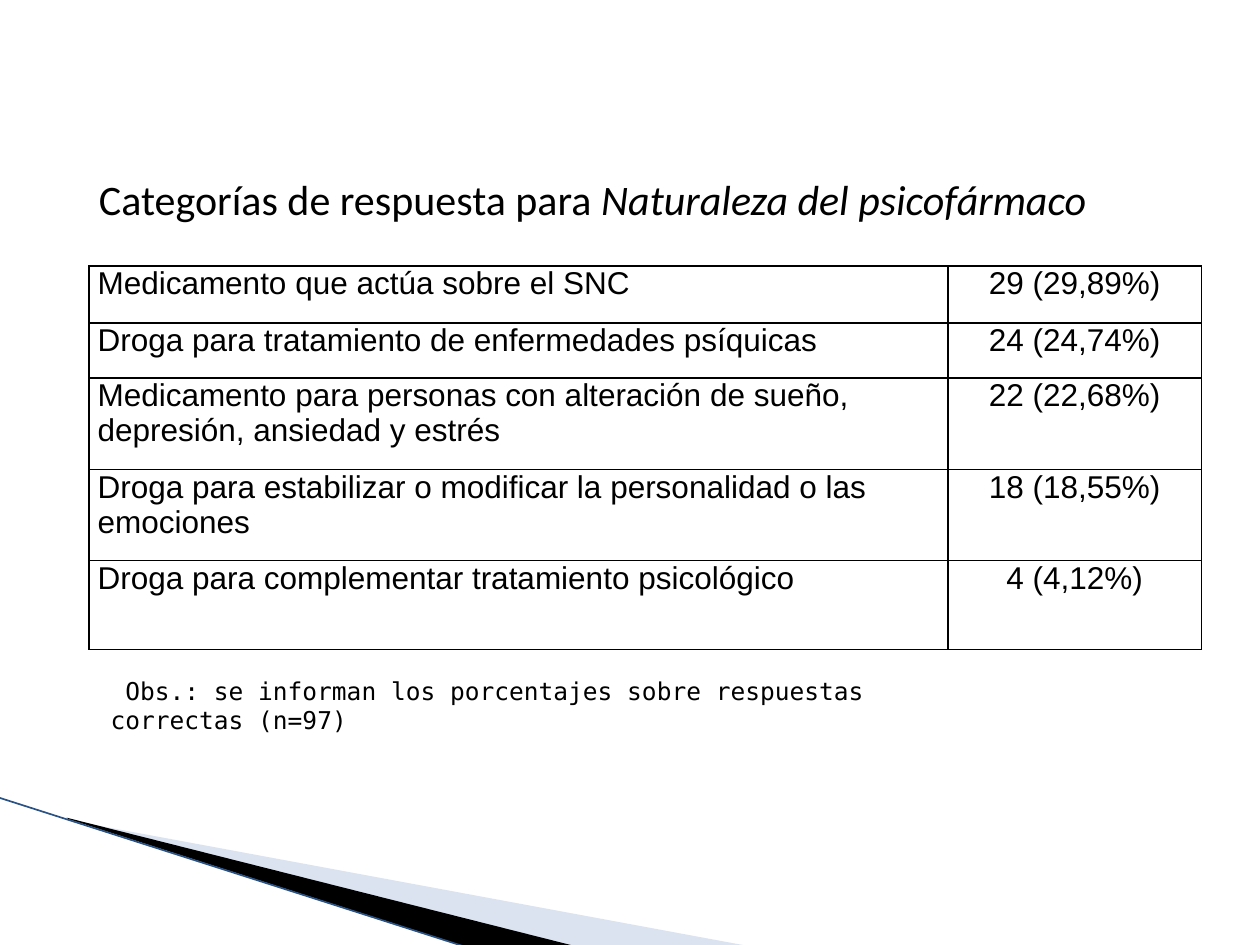
import pptx
import pptx.dml.color
import pptx.enum.shapes
import pptx.enum.text
import pptx.oxml
import pptx.oxml.ns
import pptx.util

THEME = {
    "ink": "000000", "pale": "A7B9DB", "edge": "2A5284",
    "title_font": "Calibri", "table_font": "Arial", "note_font": "DejaVu Sans Mono",
    "title_size": 24, "table_size": 18, "note_size": 14,
}
ALIGN = pptx.enum.text.PP_ALIGN
TOP = pptx.enum.text.MSO_ANCHOR.TOP
NS = pptx.oxml.ns.nsdecls("a")
qn = pptx.oxml.ns.qn

deck = pptx.Presentation()
deck.slide_width = pptx.util.Inches(10)
deck.slide_height = pptx.util.Inches(7.5)
col = deck.slide_width / 100
row = deck.slide_height / 75
slide = deck.slides.add_slide(deck.slide_layouts[5])


def rgb(name):
    return pptx.dml.color.RGBColor.from_string(THEME[name])


def write(frame, text, role, align=ALIGN.LEFT, italic=False):
    """Append a run to the frame's first paragraph, styled for its role."""
    frame.word_wrap = True
    frame.vertical_anchor = TOP
    paragraph = frame.paragraphs[0]
    paragraph.alignment = align
    run = paragraph.add_run()
    run.text = text
    run.font.name = THEME[role + "_font"]
    run.font.size = pptx.util.Pt(THEME[role + "_size"])
    run.font.italic = italic
    run.font.color.rgb = rgb("ink")


# Corner wedges: colour, opacity in percent, frame and corners in columns and rows.
# The corners reach beyond the frame, so the outline is measured from the frame.
wedges = [
    ("pale", 40, (7.8, 54.7, 41.6, 15.8),
     [(5.5, 65.1), (59.5, 75.1), (45.6, 75.1), (5.5, 65)]),
    ("ink", 100, (-0.6, 63.3, 41.6, 9.2),
     [(5.3, 64.9), (45.7, 75.1), (37.2, 75.2), (5.4, 65)]),
]
for color, opacity, (left, top, width, height), corners in wedges:
    points = [(round(x * col), round(y * row)) for x, y in corners]
    builder = slide.shapes.build_freeform(*points[0])
    builder.add_line_segments(points[1:], close=True)
    wedge = builder.convert_to_shape()
    shift_x = wedge.left - round(left * col)
    shift_y = wedge.top - round(top * row)
    wedge.left, wedge.top = round(left * col), round(top * row)
    wedge.width, wedge.height = round(width * col), round(height * row)
    outline = wedge._element.spPr.find(".//" + qn("a:path"))
    outline.set("w", str(wedge.width))
    outline.set("h", str(wedge.height))
    for point in outline.iter(qn("a:pt")):
        point.set("x", str(int(point.get("x")) + shift_x))
        point.set("y", str(int(point.get("y")) + shift_y))
    wedge.shadow.inherit = False
    wedge.line.fill.background()
    wedge.fill.solid()
    wedge.fill.fore_color.rgb = rgb(color)
    if opacity < 100:
        tint = wedge._element.spPr.find(".//" + qn("a:srgbClr"))
        tint.append(pptx.oxml.parse_xml(f'<a:alpha {NS} val="{opacity * 1000}"/>'))

edge = slide.shapes.add_connector(
    pptx.enum.shapes.MSO_CONNECTOR.STRAIGHT,
    round(-0.1 * col), round(63.3 * row), round(37.1 * col), round(75.2 * row))
edge.line.color.rgb = rgb("edge")
edge.line.width = pptx.util.Pt(0.95)
edge._element.spPr.append(pptx.oxml.parse_xml(f"<a:effectLst {NS}/>"))

# Title
title = slide.shapes.title
title.left, title.top = round(6.85 * col), round(13.3 * row)
title.width, title.height = round(90 * col), round(5 * row)
write(title.text_frame, "Categorías de respuesta para ", "title")
write(title.text_frame, "Naturaleza del psicofármaco", "title", italic=True)

# Answer categories
answers = [
    ("Medicamento que actúa sobre el SNC", "29 (29,89%)"),
    ("Droga para tratamiento de enfermedades psíquicas", "24 (24,74%)"),
    ("Medicamento para personas con alteración de sueño, depresión, ansiedad y estrés",
     "22 (22,68%)"),
    ("Droga para estabilizar o modificar la personalidad o las emociones", "18 (18,55%)"),
    ("Droga para complementar tratamiento psicológico", "4 (4,12%)"),
]
widths = [68.2, 20.1]
heights = [4.55, 4.37, 7.25, 7.23, 7.05]
categories = slide.shapes.add_table(
    len(answers), len(widths), round(7.05 * col), round(21.1 * row),
    round(sum(widths) * col), round(sum(heights) * row)).table
categories.first_row = categories.horz_banding = False
for column, width in zip(categories.columns, widths):
    column.width = round(width * col)
for r, (answer, height) in enumerate(zip(answers, heights)):
    categories.rows[r].height = round(height * row)
    for c, (text, align) in enumerate(zip(answer, (ALIGN.LEFT, ALIGN.CENTER))):
        cell = categories.cell(r, c)
        cell.margin_left = cell.margin_right = round(0.7 * col)
        cell.margin_top = cell.margin_bottom = 0
        write(cell.text_frame, text, "table", align=align)
        cell.vertical_anchor = TOP
        properties = cell._tc.get_or_add_tcPr()
        for side in ("lnL", "lnR", "lnT", "lnB"):
            properties.append(pptx.oxml.parse_xml(
                f'<a:{side} {NS} w="{pptx.util.Pt(1)}"><a:solidFill>'
                f'<a:srgbClr val="{THEME["ink"]}"/></a:solidFill></a:{side}>'))
        cell.fill.background()

# Note under the table
note = slide.shapes.add_textbox(
    round(7.8 * col), round(53.15 * row), round(68 * col), round(3.4 * row)).text_frame
write(note, "Obs.: se informan los porcentajes sobre respuestas correctas (n=97)", "note")
note.paragraphs[0]._p.get_or_add_pPr().set("indent", str(round(1.17 * col)))

deck.save("out.pptx")
